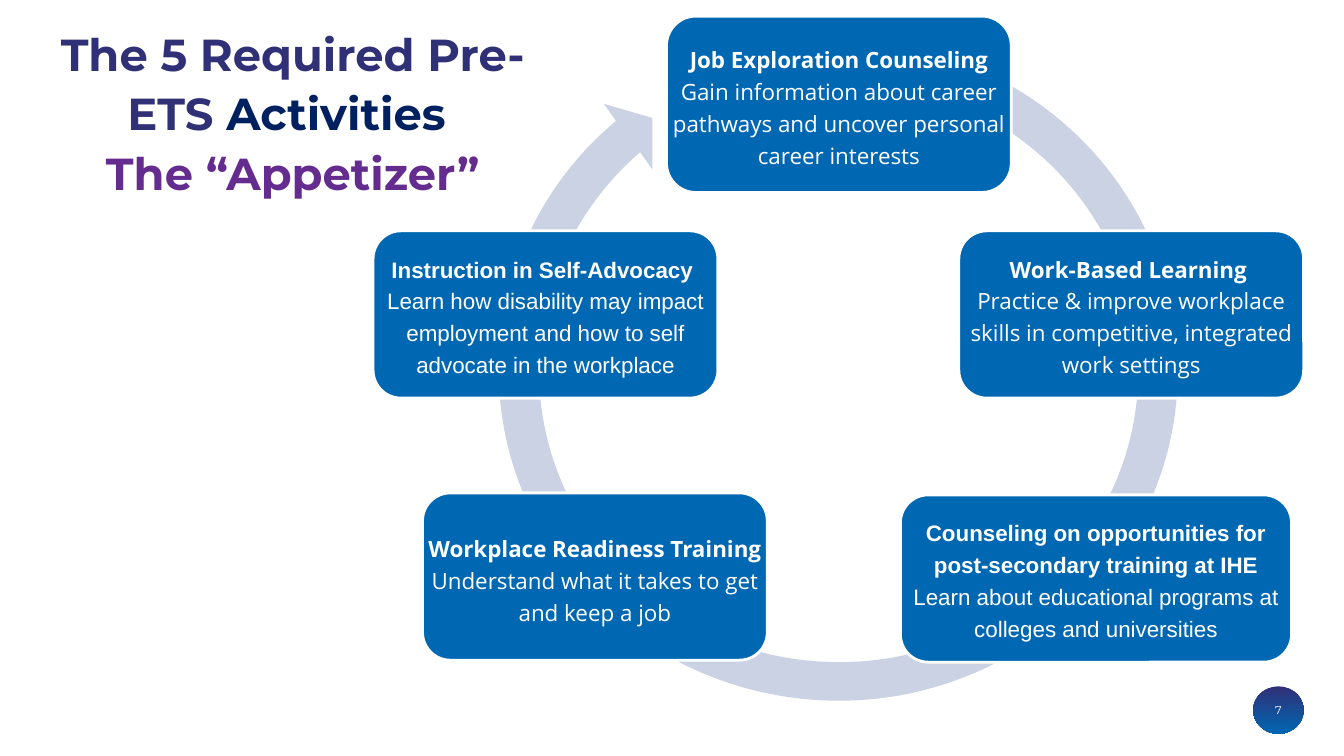
from lxml.etree import SubElement
from pptx import Presentation
from pptx.dml.color import RGBColor
from pptx.enum.shapes import MSO_SHAPE
from pptx.enum.text import MSO_ANCHOR, PP_ALIGN
from pptx.oxml.ns import qn
from pptx.util import Emu, Pt

PX = 9144  # 100 px to the inch
WHITE, BLUE, NAVY = "FFFFFF", "0067B2", "303077"

RING_BOX = (473, 19, 717, 697)
# Three points are a Bezier segment, one is a straight one.
RING = [
    [(948, 60)],
    [(1091, 111), (1180, 249), (1167, 396)],
    [(1154, 543), (1041, 663), (892, 690)],
    [(742, 716), (593, 642), (528, 509)],
    [(462, 376), (496, 216), (611, 120)],
    [(599, 103)], [(647, 117)], [(647, 168)], [(635, 151)],
    [(535, 237), (506, 378), (565, 495)],
    [(623, 611), (755, 676), (887, 652)],
    [(1018, 628), (1117, 521), (1128, 392)],
    [(1139, 262), (1060, 141), (934, 97)],
]

# Card box, top and height of its text, font, heading, detail
CARDS = [
    ((661, 16, 342, 175), (19, 171), "Open Sans", "Job Exploration Counseling",
     "Gain information about career pathways and uncover personal career interests"),
    ((951, 229, 342, 166), (229, 166), "Open Sans", "Work-Based Learning ",
     "Practice & improve workplace skills in competitive, integrated work settings"),
    ((893, 491, 388, 166), (491, 165), "Arial",
     "Counseling on opportunities for post-secondary training at IHE",
     "Learn about educational programs at colleges and universities"),
    ((419, 489, 342, 166), (491, 165), "Open Sans", "Workplace Readiness Training",
     "Understand what it takes to get and keep a job"),
    ((370, 229, 342, 166), (229, 166), "Arial", "Instruction in Self-Advocacy ",
     "Learn how disability may impact employment and how to self advocate in the workplace"),
]


def px(*values):
    return [Emu(v * PX) for v in values]


def rgb(color):
    return RGBColor.from_string(color)


def set_text(sp, paragraphs, font, size, spacing=1.0, inset=(10, 5)):
    """Fill a shape with centred paragraphs of (text, colour, bold) runs."""
    tf = sp.text_frame
    side, edge = px(*inset)
    frame = {"word_wrap": True, "vertical_anchor": MSO_ANCHOR.MIDDLE,
             "margin_left": side, "margin_right": side,
             "margin_top": edge, "margin_bottom": edge}
    for name, value in frame.items():
        setattr(tf, name, value)
    for i, runs in enumerate(paragraphs):
        p = tf.add_paragraph() if i else tf.paragraphs[0]
        p.alignment, p.line_spacing = PP_ALIGN.CENTER, spacing
        for text, color, bold in runs:
            r = p.add_run()
            r.text = text
            for name, value in {"name": font, "size": Pt(size), "bold": bold}.items():
                setattr(r.font, name, value)
            r.font.color.rgb = rgb(color)


def add_text(s, box, *args, **kwargs):
    set_text(s.shapes.add_textbox(*px(*box)), *args, **kwargs)


def fill_plain(sp, color):
    sp.shadow.inherit = False
    sp.fill.solid()
    sp.fill.fore_color.rgb = rgb(color)


def add_ring(s):
    """Frame the ring as a freeform, then give its outline true curves."""
    left, top, width, height = RING_BOX
    right, bottom = left + width, top + height
    builder = s.shapes.build_freeform(left, top, scale=PX)
    builder.add_line_segments([(right, top), (right, bottom), (left, bottom)])
    sp = builder.convert_to_shape()
    fill_plain(sp, "CAD2E4")
    sp.line.fill.background()
    outline = next(sp._element.iter(qn("a:path")))
    for child in list(outline):
        outline.remove(child)
    for i, points in enumerate(RING):
        tag = "a:cubicBezTo" if len(points) == 3 else "a:lnTo" if i else "a:moveTo"
        segment = SubElement(outline, qn(tag))
        for x, y in points:
            pt = SubElement(segment, qn("a:pt"))
            for name, value in zip("xy", px(x - left, y - top)):
                pt.set(name, str(int(value)))
    SubElement(outline, qn("a:close"))
    for name, value in zip("wh", px(width, height)):
        outline.set(name, str(int(value)))


def add_card(s, box):
    sp = s.shapes.add_shape(MSO_SHAPE.ROUNDED_RECTANGLE, *px(*box))
    sp.adjustments[0] = 0.167
    fill_plain(sp, BLUE)
    sp.line.color.rgb = rgb(WHITE)
    sp.line.width = Pt(2)


def add_page_number(s, number):
    sp = s.shapes.add_shape(MSO_SHAPE.OVAL, *px(1243, 681, 50, 47))
    sp.shadow.inherit = False
    sp.line.fill.background()
    sp.fill.gradient()
    sp.fill.gradient_angle = 270
    for stop, color, position in zip(sp.fill.gradient_stops, (NAVY, BLUE), (0, 1)):
        stop.color.rgb = rgb(color)
        stop.position = position
    set_text(sp, [[(number, WHITE, False)]], "Montserrat", 8)


def main():
    prs = Presentation()
    prs.slide_width, prs.slide_height = px(1333, 750)
    s = prs.slides.add_slide(prs.slide_layouts[6])
    add_page_number(s, "7")
    add_text(s, (23, 21, 535, 177),
             [[("The 5 Required Pre-ETS ", NAVY, True), ("Activities ", "002060", True)],
              [("The “Appetizer”", "652C8F", True)]],
             "Montserrat", 32, spacing=1.1)
    add_ring(s)
    for box, *_ in CARDS:
        add_card(s, box)
    # Text boxes keep the full width that the rounded corners would narrow.
    for (left, _, width, _), (top, height), font, heading, detail in CARDS:
        add_text(s, (left, top, width, height),
                 [[(heading, WHITE, True)], [(detail, WHITE, False)]],
                 font, 16, spacing=1.19, inset=(5, 6))
    prs.save("out.pptx")


if __name__ == "__main__":
    main()
